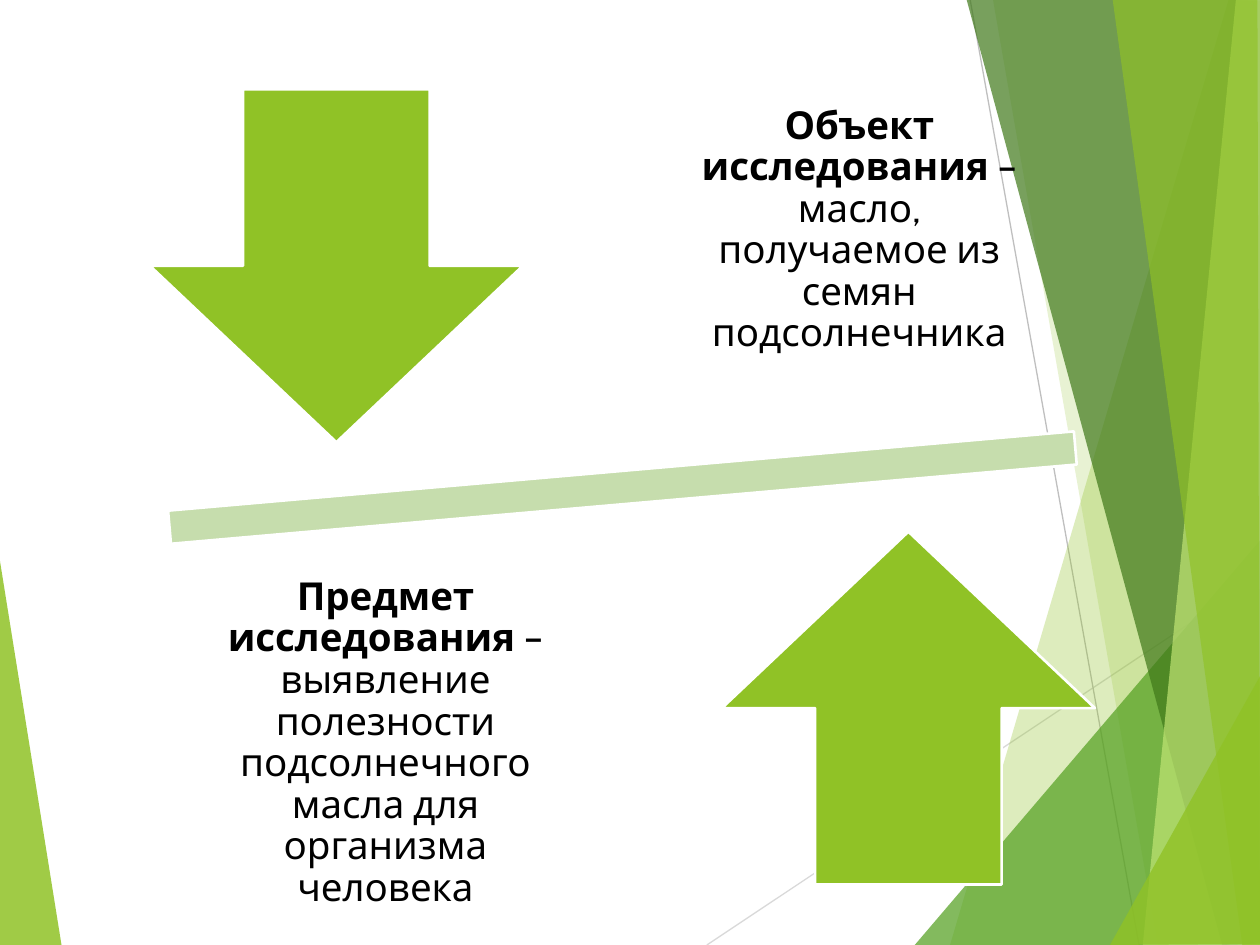
from lxml.etree import SubElement
from pptx import Presentation
from pptx.dml.color import RGBColor
from pptx.enum.shapes import MSO_CONNECTOR as Connector, MSO_SHAPE as Preset
from pptx.enum.text import MSO_ANCHOR as Anchor, PP_ALIGN as Align
from pptx.oxml.ns import qn
from pptx.util import Inches, Pt

LIME = RGBColor(0x90, 0xC2, 0x26)
GREEN = RGBColor(0x54, 0xA0, 0x21)
FOREST = RGBColor(0x3F, 0x78, 0x19)
PALE_LIME = RGBColor(0xC0, 0xE4, 0x74)
PALE_GREEN = RGBColor(0xC6, 0xDD, 0xAD)
LIGHT_GRAY = RGBColor(0xD9, 0xD9, 0xD9)
GRAY = RGBColor(0xBF, 0xBF, 0xBF)
WHITE = RGBColor(0xFF, 0xFF, 0xFF)
BLACK = RGBColor(0, 0, 0)

deck = Presentation()
deck.slide_width, deck.slide_height = Inches(10), Inches(7.5)
page = deck.slides.add_slide(deck.slide_layouts[6])


def add_facet(points, color, opacity):
    (left, top), *rest = [(x * 100, y * 100) for x, y in points]
    builder = page.shapes.build_freeform(left, top, scale=Inches(0.01))
    builder.add_line_segments(rest, close=True)
    facet = builder.convert_to_shape()
    facet.shadow.inherit = False
    facet.fill.solid()
    facet.fill.fore_color.rgb = color
    facet.line.fill.background()
    tint = next(facet.element.iter(qn("a:srgbClr")))
    SubElement(tint, qn("a:alpha"), val=str(opacity * 1000))


add_facet([(-0.01, 4.39), (0.49, 7.51), (-0.01, 7.5)], LIME, 85)

for start, end, color in [
    ((5.61, 7.5), (10.01, 4.57), LIGHT_GRAY),
    ((7.7, 0), (9.04, 7.5), GRAY),
]:
    ends = [Inches(value) for value in start + end]
    ray = page.shapes.add_connector(Connector.STRAIGHT, *ends)
    ray.line.color.rgb = color
    ray.line.width = Pt(0.75)
    SubElement(ray.element.spPr, qn("a:effectLst"))

for points, color, opacity in [
    ([(9.75, 0), (7.54, 7.5), (10.02, 7.51), (10.01, 0.01)], LIME, 30),
    ([(7.88, -0.01), (9.19, 7.5), (10.01, 7.5), (10.01, -0.01)], LIME, 20),
    ([(7.26, 7.5), (10, 4.29), (10.01, 7.5)], GREEN, 72),
    ([(7.67, -0.01), (9.7, 7.5), (10.01, 7.49), (10.01, -0.01)], FOREST, 70),
    ([(9.81, -0.01), (9.07, 7.5), (10.01, 7.5), (10, -0.01)], PALE_LIME, 70),
    ([(8.83, -0.01), (9.86, 7.5), (10, 7.5), (9.98, -0.01)], LIME, 65),
    ([(8.81, 7.5), (10.01, 5.35), (10.01, 7.49)], LIME, 80),
]:
    add_facet(points, color, opacity)

for preset, frame, rotation, color in [
    (Preset.MATH_MINUS, (0.03, 3.31, 9.82, 1.12), 355, PALE_GREEN),
    (Preset.DOWN_ARROW, (1.19, 0.71, 2.96, 2.8), 0, LIME),
    (Preset.UP_ARROW, (5.73, 4.22, 2.96, 2.8), 0, LIME),
]:
    symbol = page.shapes.add_shape(preset, *[Inches(value) for value in frame])
    symbol.rotation = rotation
    symbol.shadow.inherit = False
    symbol.fill.solid()
    symbol.fill.fore_color.rgb = color
    symbol.line.color.rgb = WHITE
    symbol.line.width = Pt(1.5)

FRAME_FORMAT = {"word_wrap": True, "vertical_anchor": Anchor.MIDDLE}
FRAME_FORMAT.update(
    {f"margin_{side}": Inches(0.17) for side in ("left", "top", "right", "bottom")}
)
PARA_FORMAT = {"alignment": Align.CENTER, "line_spacing": 0.9}
FONT_FORMAT = {"name": "Cabin", "size": Pt(22)}

for left, top, term, definition in [
    (5.24, 0.36, "Объект исследования ",
     "– масло, получаемое из семян подсолнечника"),
    (1.48, 4.43, "Предмет исследования ",
     "– выявление полезности подсолнечного масла для организма человека"),
]:
    box = page.shapes.add_textbox(Inches(left), Inches(top), Inches(3.16), Inches(2.94))
    for name, value in FRAME_FORMAT.items():
        setattr(box.text_frame, name, value)
    para = box.text_frame.paragraphs[0]
    for name, value in PARA_FORMAT.items():
        setattr(para, name, value)
    for text, bold in [(term, True), (definition, False)]:
        span = para.add_run()
        span.text = text
        span.font.bold = bold
        span.font.color.rgb = BLACK
        for name, value in FONT_FORMAT.items():
            setattr(span.font, name, value)

deck.save("out.pptx")
